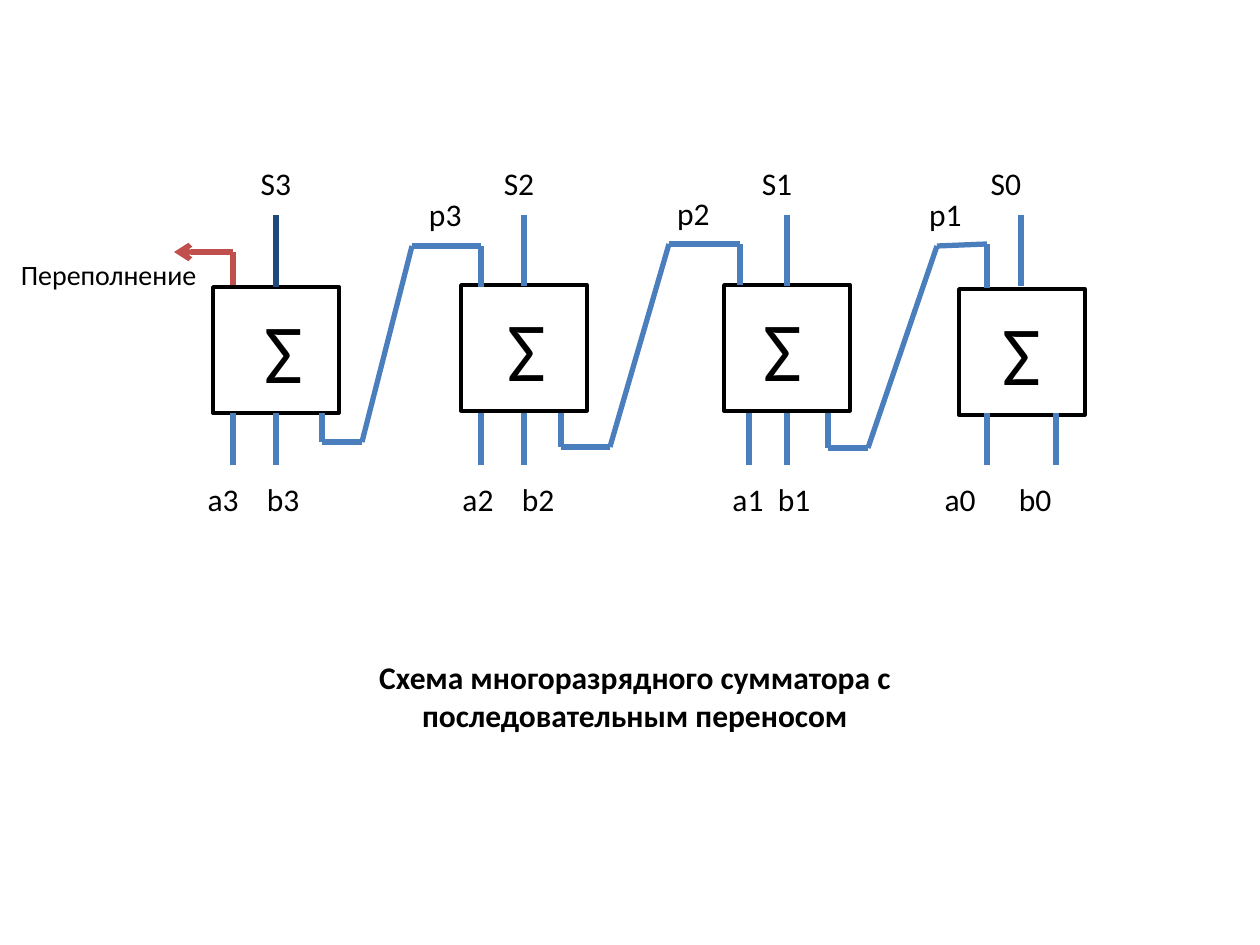
import itertools
import pptx
import pptx.dml.color
import pptx.enum.shapes
import pptx.enum.text
import pptx.oxml
import pptx.oxml.ns
import pptx.util

EMU_PER_PX = 914400 / 126
RGB = pptx.dml.color.RGBColor
BLACK = RGB(0x00, 0x00, 0x00)
WHITE = RGB(0xFF, 0xFF, 0xFF)
BLUE = RGB(0x4B, 0x7E, 0xBC)
NAVY = RGB(0x1F, 0x49, 0x7D)
RED = RGB(0xC0, 0x50, 0x4D)
ALIGN = pptx.enum.text.PP_ALIGN
ANCHOR = pptx.enum.text.MSO_ANCHOR
AUTO_SIZE = pptx.enum.text.MSO_AUTO_SIZE
RECT = pptx.enum.shapes.MSO_SHAPE.RECTANGLE
STRAIGHT = pptx.enum.shapes.MSO_CONNECTOR.STRAIGHT
A = pptx.oxml.ns.nsdecls("a")


def px(*values):
    return [pptx.util.Emu(round(v * EMU_PER_PX)) for v in values]


def write(sp, text, size=18, bold=False, align=ALIGN.LEFT, anchor=ANCHOR.MIDDLE,
          wrap=True, left=12, right=12):
    tf = sp.text_frame
    tf.auto_size = AUTO_SIZE.NONE
    tf.word_wrap = wrap
    tf.vertical_anchor = anchor
    tf.margin_left, tf.margin_right, tf.margin_top, tf.margin_bottom = px(left, right, 6, 6)
    p = tf.paragraphs[0]
    p.text = text
    p.alignment = align
    for r in p.runs:
        r.font.name = "Calibri"
        r.font.size = pptx.util.Pt(size)
        r.font.bold = bold
        r.font.color.rgb = BLACK
    return p


prs = pptx.Presentation()
prs.slide_width, prs.slide_height = px(1260, 945)
s = prs.slides.add_slide(prs.slide_layouts[5])

# Title
title = s.shapes.title
title.left, title.top, title.width, title.height = px(247, 662, 756, 78)
write(title, "Схема многоразрядного сумматора с\vпоследовательным переносом",
      bold=True, align=ALIGN.CENTER, anchor=ANCHOR.BOTTOM, left=32)

# Adder boxes: left, top, sideways shift of the sign
for left, top, shift in [(213, 287, 8), (461, 285, 3), (724, 285, -4), (959, 289, 0)]:
    sp = s.shapes.add_shape(RECT, *px(left, top, 126, 126))
    sp.shadow.inherit = False
    sp.fill.solid()
    sp.fill.fore_color.rgb = WHITE
    sp.line.color.rgb = BLACK
    sp.line.width = pptx.util.Pt(2)
    write(sp, "Σ", size=48, align=ALIGN.CENTER, left=12 + 2 * shift)

# Wires, each a run of points
inputs = [[(x, 413), (x, 472)] for x in (233, 276, 481, 524, 749, 787, 987, 1056)]
outputs = [[(x, 286), (x, 204)] for x in (524, 787, 1021)]
carries = [
    [(987, 288), (987, 244), (937, 246), (868, 448), (828, 448), (828, 413)],
    [(740, 285), (740, 244), (669, 244), (610, 447), (561, 447), (561, 413)],
    [(481, 287), (481, 246), (412, 246), (362, 442), (322, 442), (322, 413)],
]
wires = [(points, BLUE) for points in inputs + outputs + carries]
wires.append(([(276, 287), (276, 204)], NAVY))
wires.append(([(233, 285), (233, 252), (174, 252)], RED))
for points, color in wires:
    for start, end in itertools.pairwise(points):
        line = s.shapes.add_connector(STRAIGHT, *px(*start, *end))
        line.line.color.rgb = color
        line.line.width = pptx.util.Pt(3)
        line._element.spPr.append(pptx.oxml.parse_xml(f"<a:effectLst {A}/>"))

# Arrowhead on the overflow wire, the last one drawn
line.line._get_or_add_ln().append(pptx.oxml.parse_xml(f'<a:tailEnd {A} type="arrow"/>'))

# Label bands, with a centred tab stop for each label
bands = [
    ((174, 467, 911, 63), {"a3": 223, "b3": 283, "a2": 478, "b2": 538,
                           "a1": 748, "b1": 794, "a0": 960, "b0": 1035}),
    ((156, 152, 922, 61), {"S3": 276, "S2": 519, "S1": 777, "S0": 1006}),
]
for box, labels in bands:
    sp = s.shapes.add_shape(RECT, *px(*box))
    sp.shadow.inherit = False
    sp.fill.solid()
    sp.fill.fore_color.rgb = WHITE
    sp.line.color.rgb = WHITE
    sp.line.width = pptx.util.Pt(2)
    p = write(sp, "".join("\t" + label for label in labels), left=0, right=0)
    stops = "".join(f'<a:tab pos="{px(x - box[0])[0]}" algn="ctr"/>' for x in labels.values())
    p._p.get_or_add_pPr().append(pptx.oxml.parse_xml(f"<a:tabLst {A}>{stops}</a:tabLst>"))

# Carry and overflow labels
for text, box, size in [("p3", (417, 189, 58, 50), 18), ("p2", (665, 188, 58, 50), 18),
                        ("p1", (917, 189, 58, 50), 18),
                        ("Переполнение", (9, 252, 203, 47), 16)]:
    sp = s.shapes.add_textbox(*px(*box))
    write(sp, text, size=size, anchor=ANCHOR.TOP, wrap=False)

prs.save("out.pptx")
